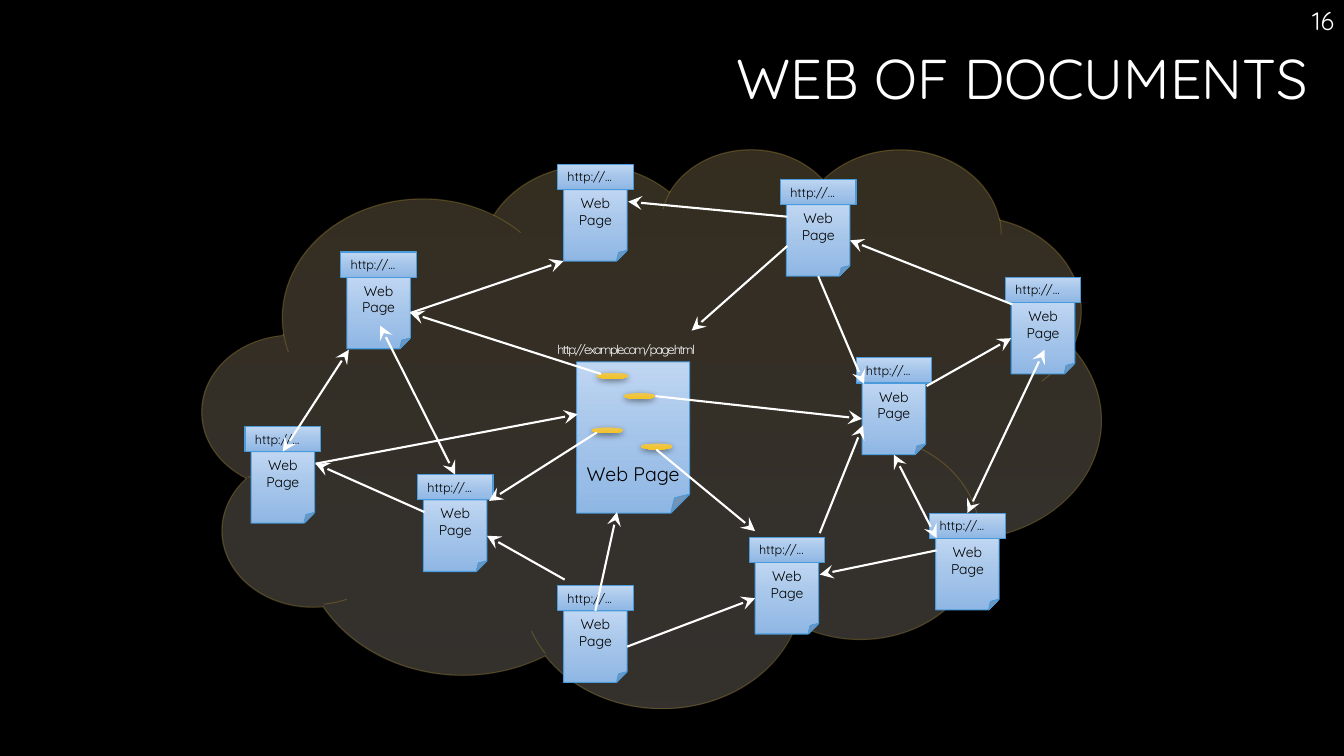
import math

import lxml.etree
import pptx
import pptx.dml.color
import pptx.enum.shapes
import pptx.enum.text
import pptx.oxml
import pptx.util

Inches = pptx.util.Inches
Pt = pptx.util.Pt
Shape = pptx.enum.shapes.MSO_SHAPE
Align = pptx.enum.text.PP_ALIGN
Anchor = pptx.enum.text.MSO_ANCHOR
NAMESPACE = 'xmlns:a="http://schemas.openxmlformats.org/drawingml/2006/main"'

PAGE_BLUE = [(0, "BFD6F2"), (52, "A4C4E9"), (100, "8FB7E4")]
LINK_YELLOW = [(0, "EBC659"), (78, "F2C42C")]
CLOUD_SAND = [(0, "FFDF9D"), (65, "FFEFD2"), (100, "FFF4E0")]


def add_gradient_shape(kind, box, stops, line=None, opacity=100, line_opacity=100):
    """Add a shape with a top-to-bottom gradient and an optional thin outline."""
    shape = slide.shapes.add_shape(kind, *map(Inches, box))
    shape.shadow.inherit = False
    stop_xml = "".join(
        f'<a:gs pos="{position * 1000}"><a:srgbClr val="{color}">'
        f'<a:alpha val="{opacity * 1000}"/></a:srgbClr></a:gs>'
        for position, color in stops)
    gradient = pptx.oxml.parse_xml(
        f'<a:gradFill {NAMESPACE} rotWithShape="1"><a:gsLst>{stop_xml}</a:gsLst>'
        '<a:lin ang="5400000" scaled="0"/></a:gradFill>')
    shape._element.spPr.find(pptx.oxml.ns.qn("a:prstGeom")).addnext(gradient)
    if line is None:
        shape.line.fill.background()
    else:
        shape.line.color.rgb = pptx.dml.color.RGBColor.from_string(line)
        shape.line.width = Pt(0.75)
        color = shape.line._ln.find(".//" + pptx.oxml.ns.qn("a:srgbClr"))
        lxml.etree.SubElement(color, pptx.oxml.ns.qn("a:alpha"), val=str(line_opacity * 1000))
    return shape


def write_text(shape, text, size, color, align=Align.LEFT, **frame_format):
    frame = shape.text_frame
    for name, value in {"word_wrap": True, "vertical_anchor": Anchor.TOP, **frame_format}.items():
        setattr(frame, name, value)
    paragraph = frame.paragraphs[0]
    paragraph.alignment = align
    run = paragraph.add_run()
    run.text = text
    for name, value in {"name": "Quicksand", "size": Pt(size)}.items():
        setattr(run.font, name, value)
    run.font.color.rgb = pptx.dml.color.RGBColor.from_string(color)
    return run


presentation = pptx.Presentation()
presentation.slide_width = Inches(13.33)
presentation.slide_height = Inches(7.5)
slide = presentation.slides.add_slide(presentation.slide_layouts[6])
slide.background.fill.solid()
slide.background.fill.fore_color.rgb = pptx.dml.color.RGBColor.from_string("000000")

title = slide.shapes.add_textbox(*map(Inches, (0.26, 0.46, 12.81, 1.41)))
write_text(title, "WEB OF DOCUMENTS", 40, "FFFFFF", Align.RIGHT)
title.text_frame.paragraphs[0].line_spacing = 0.9

add_gradient_shape(Shape.CLOUD, (2.01, 1.47, 8.91, 5.54), CLOUD_SAND, "E9BF35", 20, 21)

# The large page in the middle and its address
main_page = add_gradient_shape(Shape.FOLDED_CORNER, (5.72, 3.59, 1.12, 1.5), PAGE_BLUE, "4A9BDC")
write_text(main_page, "Web Page", 14, "000000", Align.CENTER, vertical_anchor=Anchor.BOTTOM,
           margin_left=Inches(0.05), margin_right=Inches(0.05), margin_bottom=Inches(0.09))
address = slide.shapes.add_textbox(*map(Inches, (5.43, 3.34, 1.7, 0.25)))
address_run = write_text(address, "http://example.com/page.html", 9, "FFFFFF", word_wrap=False)
address_run.font._element.set("spc", "-110")

# Small pages, each with an address tab above it
PAGE_CORNERS = [
    (3.44, 2.75), (2.49, 4.48), (4.2, 4.96), (7.8, 2.03), (10.03, 3), (8.55, 3.8),
    (7.49, 5.58), (5.59, 6.06), (5.59, 1.88), (9.28, 5.34)]
boxes = [main_page]
for left, top in PAGE_CORNERS:
    page = add_gradient_shape(Shape.FOLDED_CORNER, (left, top, 0.63, 0.71), PAGE_BLUE, "4A9BDC")
    write_text(page, "Web Page", 10, "000000", Align.CENTER)
    tab = add_gradient_shape(Shape.RECTANGLE, (left - 0.06, top - 0.25, 0.75, 0.25),
                             PAGE_BLUE, "4A9BDC")
    write_text(tab, "http://...", 9, "000000", word_wrap=False, vertical_anchor=Anchor.MIDDLE)
    boxes += [page, tab]

# Hyperlinks on the large page
for left, top in [(5.92, 3.7), (6.19, 3.9), (5.87, 4.24), (6.36, 4.4)]:
    hyperlink = add_gradient_shape(Shape.OVAL, (left, top, 0.31, 0.06), LINK_YELLOW)
    effects = hyperlink._element.spPr.find(pptx.oxml.ns.qn("a:effectLst"))
    effects.append(pptx.oxml.parse_xml(
        f'<a:outerShdw {NAMESPACE} blurRad="{Pt(4.5)}" dist="{Pt(1.5)}" dir="5400000">'
        '<a:srgbClr val="000000"><a:alpha val="48000"/></a:srgbClr></a:outerShdw>'))

# Arrows: start, end, and whether both ends have a head
ARROWS = [
    ((5.96, 3.71), (4.07, 3.11), False), ((5.92, 4.29), (4.85, 4.97), False),
    ((6.51, 4.46), (7.49, 5.27), False), ((6.5, 3.93), (8.55, 4.16), False),
    ((9.19, 3.83), (10.04, 3.36), False), ((8.87, 4.52), (9.29, 5.34), True),
    ((10.04, 3.02), (8.44, 2.39), False), ((8.13, 2.74), (8.57, 3.81), False),
    ((7.81, 2.44), (6.86, 3.28), False), ((7.81, 2.15), (6.23, 2), False),
    ((9.61, 5.11), (10.36, 3.47), True), ((9.29, 5.46), (8.13, 5.7), False),
    ((8.13, 5.29), (8.56, 4.22), False), ((6.23, 6.42), (7.47, 5.95), False),
    ((5.91, 6.06), (6.12, 5.08), False), ((5.6, 5.75), (4.79, 5.33), False),
    ((4.21, 5.08), (3.13, 4.6), False), ((4.52, 4.73), (3.77, 3.23), True),
    ((2.81, 4.49), (3.46, 3.47), True), ((3.13, 4.6), (5.73, 4.11), False),
    ((4.08, 3.11), (5.59, 2.59), False)]
side_middles = []
for box in boxes:
    center_x, center_y = box.left + box.width // 2, box.top + box.height // 2
    middles = [(center_x, box.top), (box.left, center_y),
               (center_x, box.top + box.height), (box.left + box.width, center_y)]
    side_middles += [(middle, box, side) for side, middle in enumerate(middles)]

for start, end, two_way in ARROWS:
    ends = [tuple(map(Inches, start)), tuple(map(Inches, end))]
    arrow = slide.shapes.add_connector(
        pptx.enum.shapes.MSO_CONNECTOR.STRAIGHT, *ends[0], *ends[1])
    for point, connect in zip(ends, (arrow.begin_connect, arrow.end_connect)):
        middle, box, side = min(side_middles, key=lambda entry: math.dist(entry[0], point))
        if math.dist(middle, point) < Inches(0.05):
            connect(box, side)
    arrow.line.color.rgb = pptx.dml.color.RGBColor.from_string("FFFFFF")
    arrow.line.width = Pt(1.5)
    for head in ["headEnd", "tailEnd"] if two_way else ["tailEnd"]:
        lxml.etree.SubElement(arrow.line._ln, pptx.oxml.ns.qn("a:" + head),
                              type="stealth", w="lg", len="lg")
    lxml.etree.SubElement(arrow._element.spPr, pptx.oxml.ns.qn("a:effectLst"))

slide_number = slide.shapes.add_textbox(*map(Inches, (10.45, 0, 2.88, 0.4)))
write_text(slide_number, "16", 18, "FFFFFF", Align.RIGHT)

presentation.save("out.pptx")
